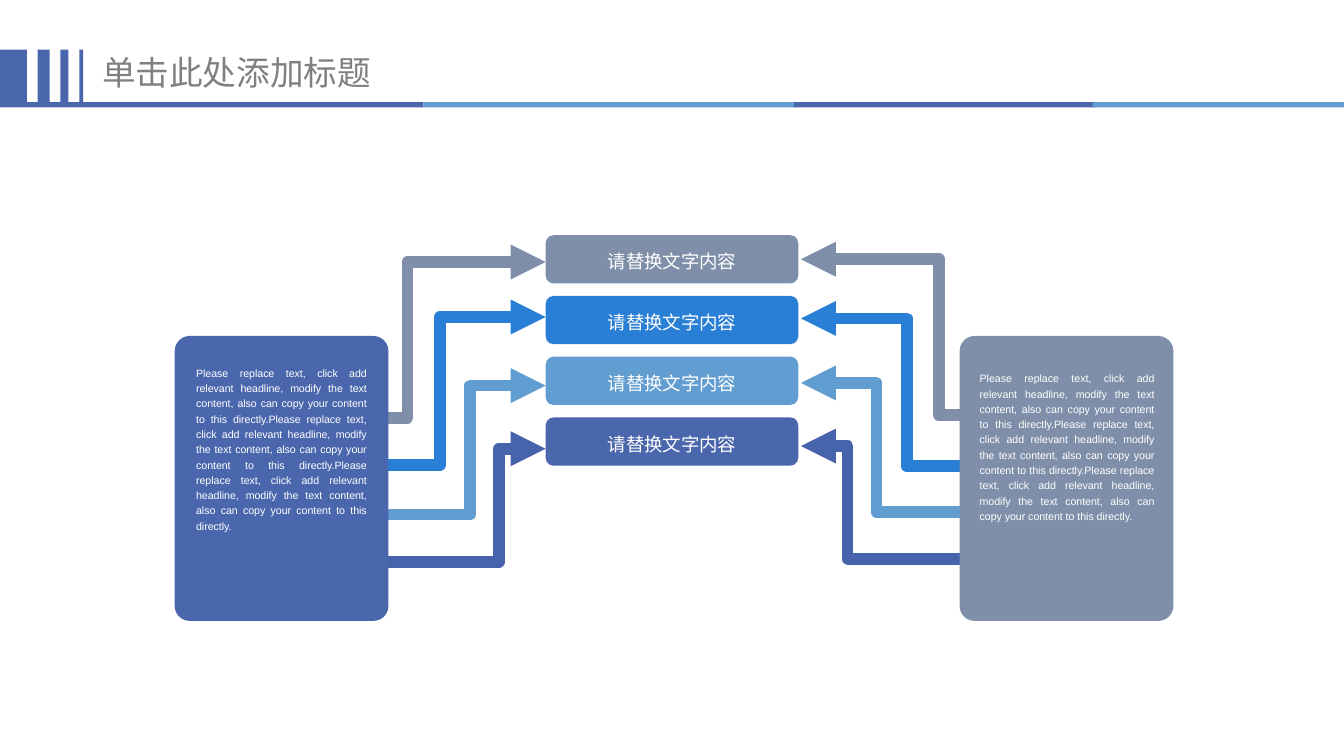
from lxml.etree import SubElement
from pptx import Presentation
from pptx.dml.color import RGBColor
from pptx.enum.shapes import MSO_CONNECTOR, MSO_SHAPE
from pptx.enum.text import MSO_ANCHOR, MSO_AUTO_SIZE, PP_ALIGN
from pptx.oxml.ns import qn
from pptx.util import Inches, Pt

CELL = Inches(0.1)  # the slide is a grid of 100 columns by 56.25 rows
MIRROR = 100.2  # a left column and its right twin add up to this
NAVY, SKY, BLUE, SLATE, INDIGO = "4A66AC", "629DD1", "297FD5", "7F8FA9", "4663AB"
WHITE, GREY = "FFFFFF", "808080"
LATIN, CHINESE = "Arial", "Noto Sans CJK SC"

TITLE = "单击此处添加标题"
LABEL = "请替换文字内容"
SENTENCE = ("Please replace text, click add relevant headline, modify the text "
            "content, also can copy your content to this directly.")

STRIPES = [(0, 2), (2.8, 0.9), (4.5, 0.6), (5.9, 0.3)]  # column, width
RULE = [(0, 31.5, NAVY), (31.5, 27.7, SKY), (59.1, 22.4, NAVY), (81.3, 18.7, SKY)]
LABEL_COLOURS = [SLATE, BLUE, SKY, NAVY]
# colour, start column, start row, end row, bend share, row shift on the right
ROUTES = [
    (SLATE, 22, 31.1, 19.5, 0.447, -0.2),
    (BLUE, 22.5, 34.6, 23.6, 0.565, 0.1),
    (SKY, 22.5, 38.3, 28.7, 0.69, -0.2),
    (INDIGO, 22.5, 41.8, 33.4, 0.808, -0.2),
]
# panel column, colour, then column, row and width of its text
PANELS = [(13, NAVY, 14.6, 27.1, 12.7), (71.4, SLATE, 72.9, 27.5, 13)]


def grid(*cells):
    return [round(cell * CELL) for cell in cells]


def colour(value):
    return RGBColor.from_string(value)


def style(para, size, font, text_colour, align):
    para.alignment = align
    for span in para.runs:
        span.font.size = Pt(size)
        span.font.name = font
        span.font.color.rgb = colour(text_colour)
        SubElement(span.font._element, qn("a:ea"), typeface=CHINESE)


def add_box(page, column, row, width, height, fill, kind=MSO_SHAPE.RECTANGLE):
    box = page.shapes.add_shape(kind, *grid(column, row, width, height))
    box.shadow.inherit = False
    box.fill.solid()
    box.fill.fore_color.rgb = colour(fill)
    box.line.fill.background()
    return box


def add_title(page):
    title = page.shapes.title
    title.left, title.top, title.width, title.height = grid(6.8, 3.5, 26.7, 3.8)
    frame = title.text_frame
    frame.text = TITLE
    frame.auto_size = MSO_AUTO_SIZE.NONE
    frame.vertical_anchor = MSO_ANCHOR.MIDDLE
    frame.margin_left = frame.margin_right = Inches(0.08)
    frame.margin_top = frame.margin_bottom = Inches(0.04)
    style(frame.paragraphs[0], 18, CHINESE, GREY, PP_ALIGN.LEFT)


def add_header(page):
    for column, width in STRIPES:
        add_box(page, column, 3.7, width, 3.9, NAVY)
    for column, width, fill in RULE:
        add_box(page, column, 7.6, width, 0.4, fill)
    add_title(page)


def add_label(page, row, fill):
    box = add_box(page, 40.6, row, 18.8, 3.6, fill, MSO_SHAPE.ROUNDED_RECTANGLE)
    frame = box.text_frame
    frame.text = LABEL
    frame.vertical_anchor = MSO_ANCHOR.MIDDLE
    para = frame.paragraphs[0]
    para.line_spacing = 1.2
    style(para, 9.9, LATIN, WHITE, PP_ALIGN.CENTER)


def add_arrow(page, start, end, bend, line_colour):
    """Draw an elbow arrow that turns at the given share of its width."""
    arrow = page.shapes.add_connector(MSO_CONNECTOR.ELBOW, *grid(*start, *end))
    arrow.line.width = Pt(6.25)
    arrow.line.color.rgb = colour(line_colour)
    properties = arrow._element.spPr
    guides = properties.find(qn("a:prstGeom")).get_or_add_avLst()
    SubElement(guides, qn("a:gd"), name="adj1", fmla=f"val {round(bend * 100000)}")
    line = properties.find(qn("a:ln"))
    SubElement(line, qn("a:round"))
    SubElement(line, qn("a:tailEnd"), type="triangle")
    SubElement(properties, qn("a:effectLst"))


def add_panel(page, column, fill, text_column, text_row, text_width):
    box = add_box(page, column, 25, 15.9, 21.2, fill, MSO_SHAPE.ROUNDED_RECTANGLE)
    box.adjustments[0] = 0.07
    note = page.shapes.add_textbox(*grid(text_column, text_row, text_width, 12.6))
    frame = note.text_frame
    frame.word_wrap = True
    frame.margin_left = frame.margin_right = 0
    frame.margin_top = frame.margin_bottom = 0
    frame.text = SENTENCE * 3
    para = frame.paragraphs[0]
    para.line_spacing = 1.2
    para.space_before = Pt(1.1)
    style(para, 5.7, LATIN, WHITE, PP_ALIGN.JUSTIFY)


def main():
    deck = Presentation()
    deck.slide_width, deck.slide_height = grid(100, 56.25)
    page = deck.slides.add_slide(deck.slide_layouts[5])
    add_header(page)
    for line_colour, column, start, end, bend, shift in ROUTES:
        add_arrow(page, (column, start), (40.6, end), bend, line_colour)
        add_arrow(page, (MIRROR - column, start + shift),
                  (MIRROR - 40.6, end + shift), bend, line_colour)
    for index, fill in enumerate(LABEL_COLOURS):
        add_label(page, 17.5 + 4.52 * index, fill)
    for panel in PANELS:
        add_panel(page, *panel)
    deck.save("out.pptx")


if __name__ == "__main__":
    main()
